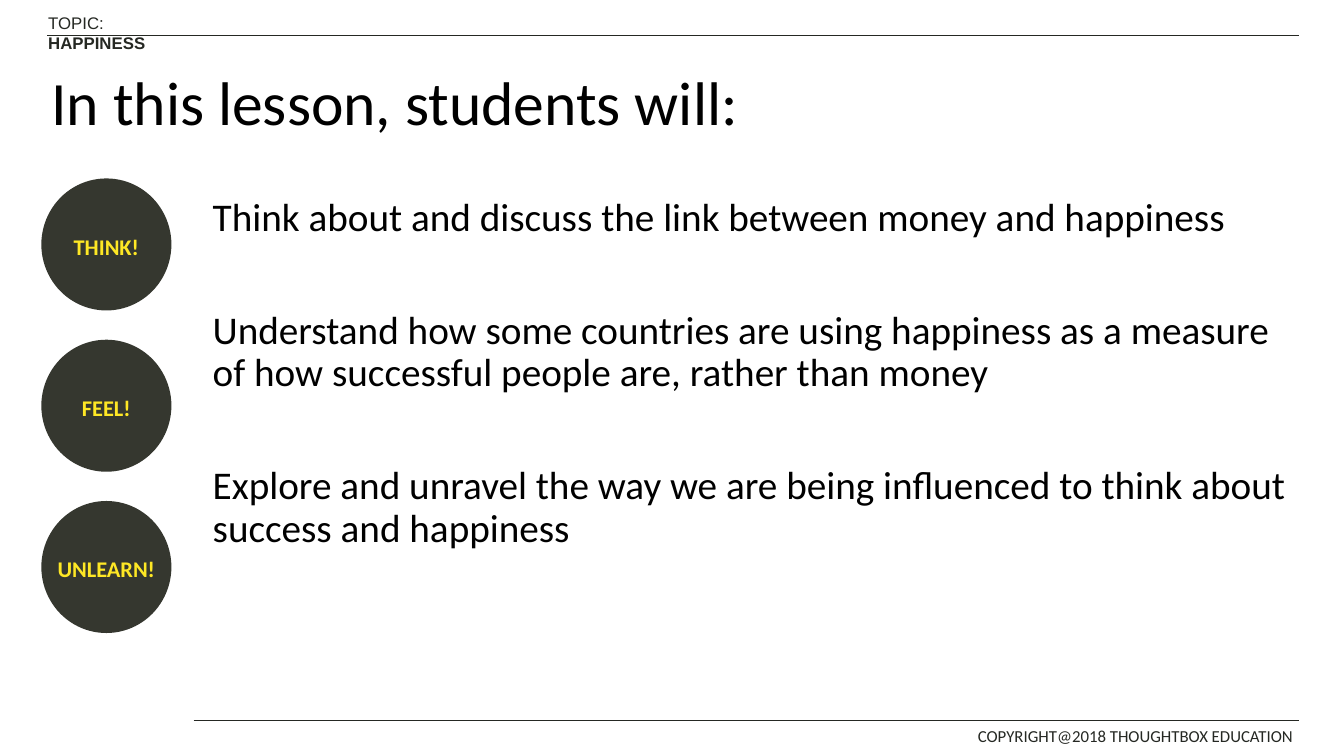
"""Build the lesson aims slide on money and happiness."""
from dataclasses import dataclass

from lxml import etree
from pptx import Presentation
from pptx.dml.color import RGBColor
from pptx.enum import shapes, text
from pptx.oxml import ns
from pptx.util import Inches, Pt

TITLE = "In this lesson, students will:"
AIMS = [
    "Think about and discuss the link between money and happiness",
    "Understand how some countries are using happiness as a measure of how successful people are, rather than money",
    "Explore and unravel the way we are being influenced to think about success and happiness",
]
BADGES = ["THINK!", "FEEL!", "UNLEARN!"]
LABELS = [
    ((0.38, 0.08, 1.52, 0.5), [("TOPIC: ", False), ("HAPPINESS", True)], "Arial"),
    ((9.6, 7.15, 3.4, 0.31), [("COPYRIGHT@2018 THOUGHTBOX EDUCATION", False)], "Calibri"),
]
RULES = [(0.47, 0.35), (1.92, 7.15)]
RULE_END = 12.88
TITLE_AREA = (0.41, 0.32, 11.5, 1.45)
AIMS_AREA = (2.01, 1.91, 10.91, 4.76)
BADGE_AREA = (0.41, 1.77, 1.29, 1.31)
BADGE_STEP = 1.6


@dataclass(frozen=True)
class Theme:
    """Colours, typeface and type sizes."""
    ink: str = "000000"
    rule: str = "252823"
    badge: str = "35372F"
    accent: str = "FEE725"
    face: str = "Calibri"
    title: int = 44
    body: int = 28
    badge_size: int = 16
    label: int = 12


THEME = Theme()


def style(font, size, colour, face=THEME.face, bold=False):
    """Set the look of a font."""
    font.name, font.size, font.bold = face, Pt(size), bold
    font.color.rgb = RGBColor.from_string(colour)


def place(box, area):
    """Move a placeholder to an area in inches."""
    box.left, box.top, box.width, box.height = map(Inches, area)


def add_title(page):
    """Fill the title placeholder."""
    box = page.shapes.title
    place(box, TITLE_AREA)
    frame = box.text_frame
    frame.text = TITLE
    frame.auto_size = text.MSO_AUTO_SIZE.NONE
    frame.vertical_anchor = text.MSO_ANCHOR.MIDDLE
    para = frame.paragraphs[0]
    para.alignment = text.PP_ALIGN.LEFT
    para.line_spacing = 0.9
    style(para.runs[0].font, THEME.title, THEME.ink)


def add_aims(page):
    """Fill the body placeholder with unbulleted aims."""
    box = page.placeholders[1]
    place(box, AIMS_AREA)
    frame = box.text_frame
    frame.text = "\n".join(AIMS)
    frame.auto_size = text.MSO_AUTO_SIZE.NONE
    for index, para in enumerate(frame.paragraphs):
        para.line_spacing = 0.9
        para.space_before = Pt(50.5 if index else 0)
        properties = para._p.get_or_add_pPr()
        properties.set("marL", "0")
        properties.set("indent", "0")
        etree.SubElement(properties, ns.qn("a:buNone"))
        style(para.runs[0].font, THEME.body, THEME.ink)


def add_label(page, area, parts, face):
    """Add a small header or footer label."""
    frame = page.shapes.add_textbox(*map(Inches, area)).text_frame
    frame.word_wrap = True
    for words, bold in parts:
        span = frame.paragraphs[0].add_run()
        span.text = words
        style(span.font, THEME.label, THEME.rule, face, bold)


def add_rule(page, left, top):
    """Add a thin horizontal rule."""
    ends = map(Inches, (left, top, RULE_END, top))
    line = page.shapes.add_connector(shapes.MSO_CONNECTOR.STRAIGHT, *ends)
    line.line.width = Pt(1)
    line.line.color.rgb = RGBColor.from_string(THEME.rule)
    etree.SubElement(line._element.spPr, ns.qn("a:effectLst"))


def add_badge(page, index, words):
    """Add one round badge in the left column."""
    left, top, width, height = BADGE_AREA
    area = map(Inches, (left, top + index * BADGE_STEP, width, height))
    badge = page.shapes.add_shape(shapes.MSO_SHAPE.OVAL, *area)
    badge.shadow.inherit = False
    badge.fill.solid()
    badge.fill.fore_color.rgb = RGBColor.from_string(THEME.badge)
    badge.line.fill.background()
    frame = badge.text_frame
    frame.text = words
    frame.word_wrap = False
    frame.margin_left = frame.margin_right = 0
    frame.vertical_anchor = text.MSO_ANCHOR.MIDDLE
    para = frame.paragraphs[0]
    para.alignment = text.PP_ALIGN.CENTER
    para.line_spacing = 1.15
    style(para.runs[0].font, THEME.badge_size, THEME.accent, bold=True)


def main():
    """Build and save the deck."""
    deck = Presentation()
    deck.slide_width, deck.slide_height = Inches(13.33), Inches(7.5)
    page = deck.slides.add_slide(deck.slide_layouts[1])
    add_title(page)
    add_aims(page)
    for label in LABELS:
        add_label(page, *label)
    for rule in RULES:
        add_rule(page, *rule)
    for index, words in enumerate(BADGES):
        add_badge(page, index, words)
    deck.save("out.pptx")


if __name__ == "__main__":
    main()
